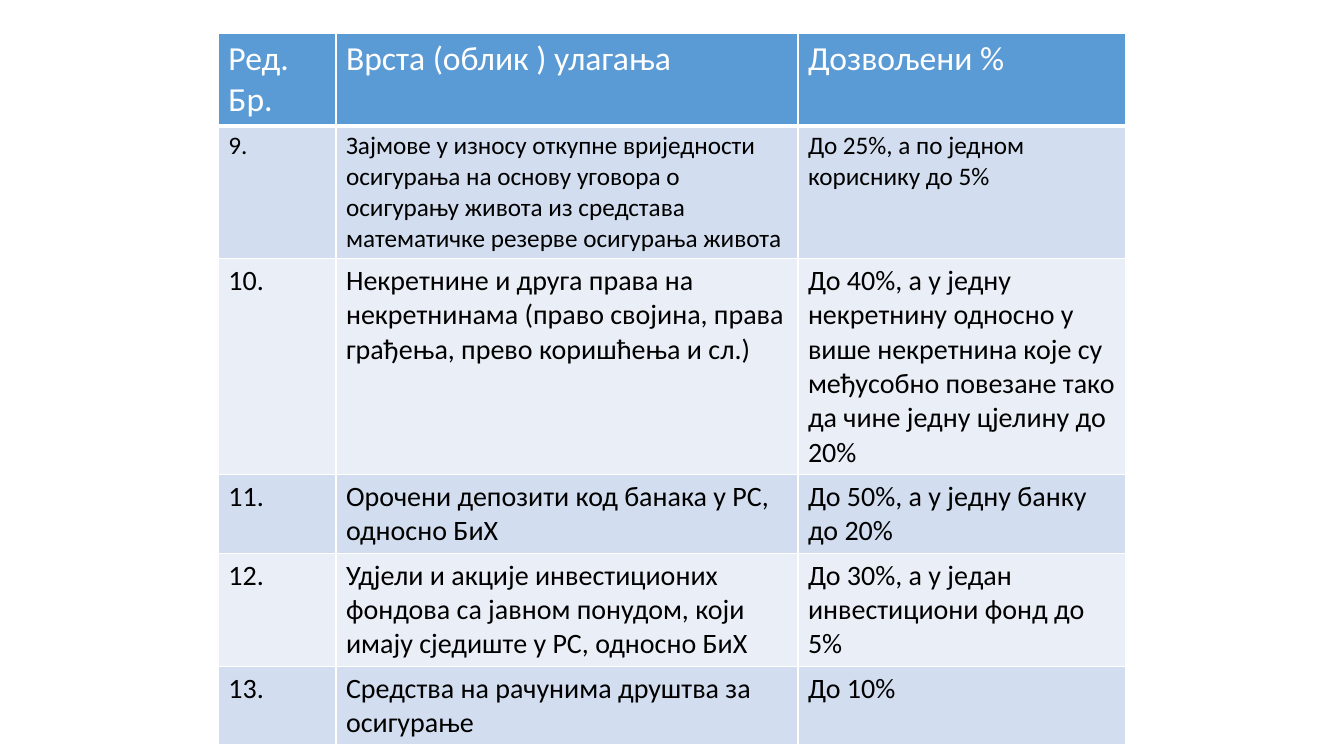
from lxml import etree
from pptx import Presentation
from pptx.dml.color import RGBColor
from pptx.oxml.ns import qn
from pptx.util import Pt

COLOURS = {
    "header": "5B9BD5",
    "odd": "D2DEEF",
    "even": "EAEFF7",
    "border": "FFFFFF",
    "header_text": "FFFFFF",
    "body_text": "000000",
}
COLUMN_WIDTHS = [84, 330, 234]
ROW_HEIGHTS = [65, 95, 154, 56, 80.5, 56]
FONT_SIZES = [24, 18, 20, 20, 20, 20]
INVESTMENTS = [
    ("Ред. Бр.", "Врста (облик ) улагања", "Дозвољени %"),
    ("9.",
     "Зајмове у износу откупне вриједности осигурања на основу уговора о "
     "осигурању живота из средстава математичке резерве осигурања живота",
     "До 25%, а по једном кориснику до 5%"),
    ("10.",
     "Некретнине и друга права на некретнинама (право својина, права "
     "грађења, прево коришћења и сл.)",
     "До 40%, а у једну некретнину односно у више некретнина које су "
     "међусобно повезане тако да чине једну цјелину до 20%"),
    ("11.", "Орочени депозити код банака у РС, односно БиХ",
     "До 50%, а у једну банку до 20%"),
    ("12.",
     "Удјели и акције инвестиционих фондова са јавном понудом, који имају "
     "сједиште у РС, односно БиХ",
     "До 30%, а у један инвестициони фонд до 5%"),
    ("13.", "Средства на рачунима друштва за осигурање", "До 10%"),
]


def set_borders(cell, bottom_width):
    properties = cell._tc.get_or_add_tcPr()
    for position, side in enumerate(("lnL", "lnR", "lnT", "lnB")):
        width = bottom_width if side == "lnB" else 1
        line = etree.Element(qn(f"a:{side}"), w=str(Pt(width)))
        fill = etree.SubElement(line, qn("a:solidFill"))
        etree.SubElement(fill, qn("a:srgbClr"), val=COLOURS["border"])
        properties.insert(position, line)


prs = Presentation()
prs.slide_width = Pt(960)
prs.slide_height = Pt(540)
slide = prs.slides.add_slide(prs.slide_layouts[6])

limits = slide.shapes.add_table(
    len(INVESTMENTS), len(COLUMN_WIDTHS),
    Pt(156), Pt(24), Pt(sum(COLUMN_WIDTHS)), Pt(sum(ROW_HEIGHTS)),
).table
for column, width in zip(limits.columns, COLUMN_WIDTHS):
    column.width = Pt(width)

for index, (row, texts) in enumerate(zip(limits.rows, INVESTMENTS)):
    row.height = Pt(ROW_HEIGHTS[index])
    is_header = index == 0
    band = "header" if is_header else "odd" if index % 2 else "even"
    for cell, text in zip(row.cells, texts):
        cell.text = text
        cell.fill.solid()
        cell.fill.fore_color.rgb = RGBColor.from_string(COLOURS[band])
        set_borders(cell, 3 if is_header else 1)
        font = cell.text_frame.paragraphs[0].font
        font.name = "Calibri"
        font.size = Pt(FONT_SIZES[index])
        font.bold = False
        font.color.rgb = RGBColor.from_string(
            COLOURS["header_text" if is_header else "body_text"])

prs.save("out.pptx")
